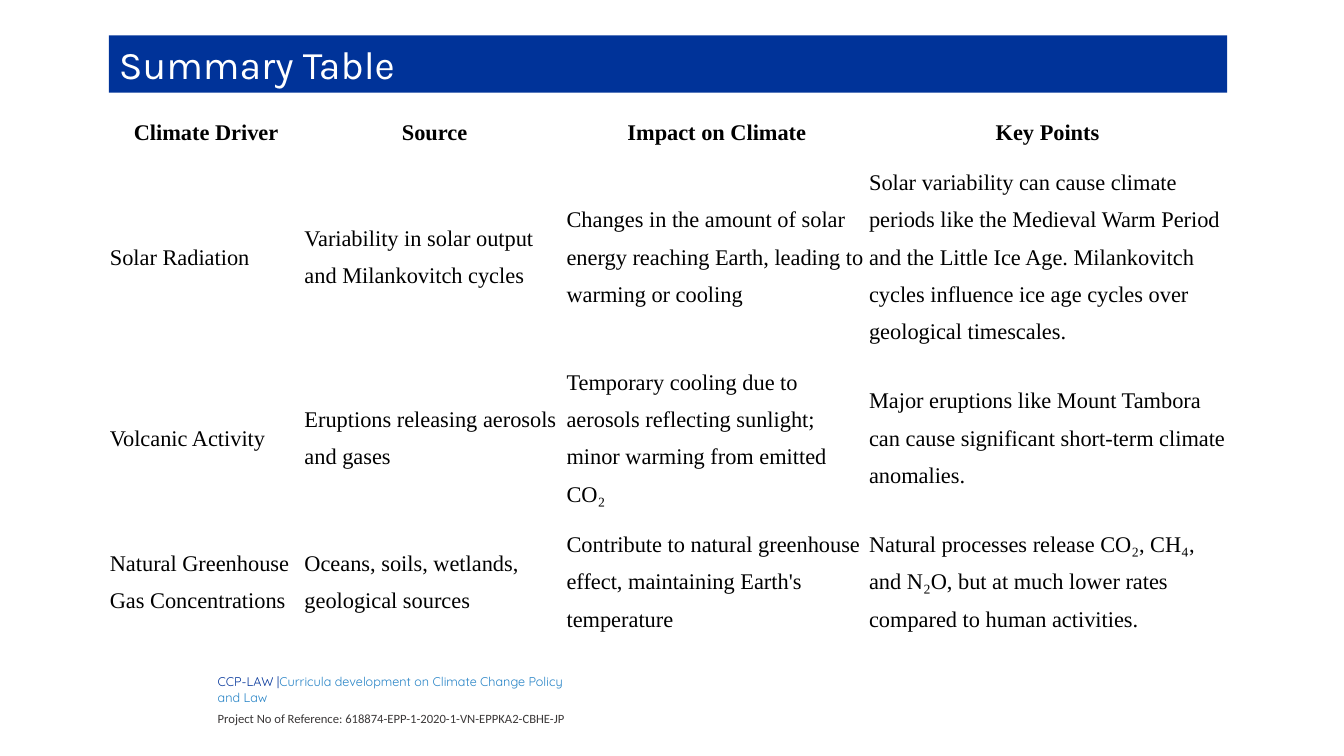
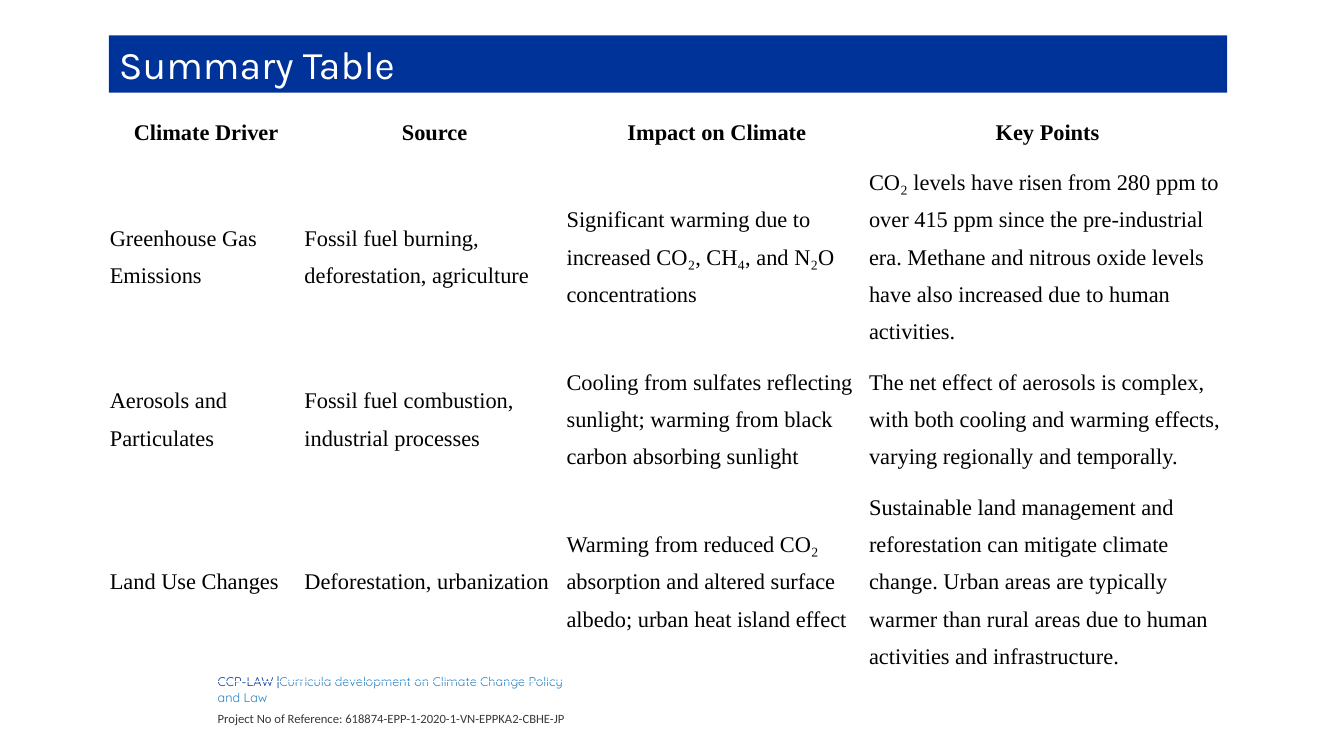
import pptx
import pptx.dml.color
import pptx.enum.text
import pptx.util
from pptx.util import Inches

COLORS = {"navy": "003399", "sky": "2683C6", "gray": "3B3838", "white": "FFFFFF", "black": "000000"}

TITLE = "Summary Table"
HEADER = ("Climate Driver", "Source", "Impact on Climate", "Key Points")
FOOTER_NAME = "CCP-LAW |"
FOOTER_TOPIC = "Curricula development on Climate Change Policy and Law"
FOOTER_REFERENCE = "Project No of Reference: 618874-EPP-1-2020-1-VN-EPPKA2-CBHE-JP"

SLIDES = [
    {
        "height": 5.08,
        "rows": [
            ("Solar Radiation",
             "Variability in solar output and Milankovitch cycles",
             "Changes in the amount of solar energy reaching Earth, leading to warming or cooling",
             "Solar variability can cause climate periods like the Medieval Warm Period and the "
             "Little Ice Age. Milankovitch cycles influence ice age cycles over geological timescales."),
            ("Volcanic Activity",
             "Eruptions releasing aerosols and gases",
             "Temporary cooling due to aerosols reflecting sunlight; minor warming from emitted CO₂",
             "Major eruptions like Mount Tambora can cause significant short-term climate anomalies."),
            ("Natural Greenhouse Gas Concentrations",
             "Oceans, soils, wetlands, geological sources",
             "Contribute to natural greenhouse effect, maintaining Earth's temperature",
             "Natural processes release CO₂, CH₄, and N₂O, but at much lower rates compared to "
             "human activities."),
        ],
    },
    {
        "height": 5.48,
        "rows": [
            ("Greenhouse Gas Emissions",
             "Fossil fuel burning, deforestation, agriculture",
             "Significant warming due to increased CO₂, CH₄, and N₂O concentrations",
             "CO₂ levels have risen from 280 ppm to over 415 ppm since the pre-industrial era. "
             "Methane and nitrous oxide levels have also increased due to human activities."),
            ("Aerosols and Particulates",
             "Fossil fuel combustion, industrial processes",
             "Cooling from sulfates reflecting sunlight; warming from black carbon absorbing sunlight",
             "The net effect of aerosols is complex, with both cooling and warming effects, "
             "varying regionally and temporally."),
            ("Land Use Changes",
             "Deforestation, urbanization",
             "Warming from reduced CO₂ absorption and altered surface albedo; urban heat island effect",
             "Sustainable land management and reforestation can mitigate climate change. Urban areas "
             "are typically warmer than rural areas due to human activities and infrastructure."),
        ],
    },
]

LEFT, WIDTH = 1.08, 11.09
COLUMN_WIDTHS = (1.93, 2.6, 3, 3.56)
FOOTER_WIDTHS = (0.78, 3.74)


def rgb(name):
    return pptx.dml.color.RGBColor.from_string(COLORS[name])


def write(paragraph, text, *, font, size, color, bold=False, align="LEFT",
          line_spacing=1.0, before=0):
    """Append a formatted run and set the format of its paragraph."""
    paragraph.alignment = getattr(pptx.enum.text.PP_ALIGN, align)
    paragraph.line_spacing = line_spacing
    paragraph.space_before = pptx.util.Pt(before)
    run = paragraph.add_run()
    run.text = text
    run.font.name = font
    run.font.size = pptx.util.Pt(size)
    run.font.bold = bold
    run.font.color.rgb = rgb(color)


def add_plain_table(slide, row_count, left, top, widths, height, row_height, *,
                    side, above, below):
    """Add an unfilled table whose rows grow from row_height with their text."""
    frame = slide.shapes.add_table(row_count, len(widths), Inches(left), Inches(top),
                                   Inches(sum(widths)), Inches(height))
    table = frame.table
    table.first_row = table.horz_banding = False
    for column, width in zip(table.columns, widths):
        column.width = Inches(width)
    for row in table.rows:
        row.height = Inches(row_height)
    for cell in table.iter_cells():
        cell.fill.background()
        cell.vertical_anchor = pptx.enum.text.MSO_ANCHOR.MIDDLE
        cell.margin_left = cell.margin_right = Inches(side)
        cell.margin_top = Inches(above)
        cell.margin_bottom = Inches(below)
    return table


def add_footer(slide):
    table = add_plain_table(slide, 1, 1.31, 6.67, FOOTER_WIDTHS, 0.52, 0.12,
                            side=0.07, above=0, below=0)
    text_frame = table.cell(0, 1).text_frame
    name_line = text_frame.paragraphs[0]
    for text, color in ((FOOTER_NAME, "navy"), (FOOTER_TOPIC, "sky")):
        write(name_line, text, font="Quicksand", size=9, color=color, line_spacing=1.07)
    write(text_frame.add_paragraph(), FOOTER_REFERENCE, font="Calibri", size=9,
          color="gray", line_spacing=1.07, before=3)


def add_title(slide):
    title = slide.shapes.title
    title.left, title.top = Inches(LEFT), Inches(0.35)
    title.width, title.height = Inches(WIDTH), Inches(0.57)
    title.fill.solid()
    title.fill.fore_color.rgb = rgb("navy")
    text_frame = title.text_frame
    text_frame.auto_size = pptx.enum.text.MSO_AUTO_SIZE.NONE
    text_frame.vertical_anchor = pptx.enum.text.MSO_ANCHOR.TOP
    write(text_frame.paragraphs[0], TITLE, font="Karla", size=28, color="white")


def add_summary(slide, rows, height):
    lines = [HEADER, *rows]
    table = add_plain_table(slide, len(lines), LEFT, 1.06, COLUMN_WIDTHS, height, 0.2,
                            side=0.01, above=0.01, below=0.12)
    for row_index, line in enumerate(lines):
        is_header = row_index == 0
        for column_index, text in enumerate(line):
            paragraph = table.cell(row_index, column_index).text_frame.paragraphs[0]
            write(paragraph, text, font="Times New Roman", size=16, color="black",
                  bold=is_header, align="CENTER" if is_header else "LEFT", line_spacing=1.5)


def main():
    presentation = pptx.Presentation()
    presentation.slide_width = Inches(13.33)
    presentation.slide_height = Inches(7.5)
    title_only = presentation.slide_layouts.get_by_name("Title Only")
    for content in SLIDES:
        slide = presentation.slides.add_slide(title_only)
        add_footer(slide)
        add_title(slide)
        add_summary(slide, content["rows"], content["height"])
    presentation.save("out.pptx")


if __name__ == "__main__":
    main()
